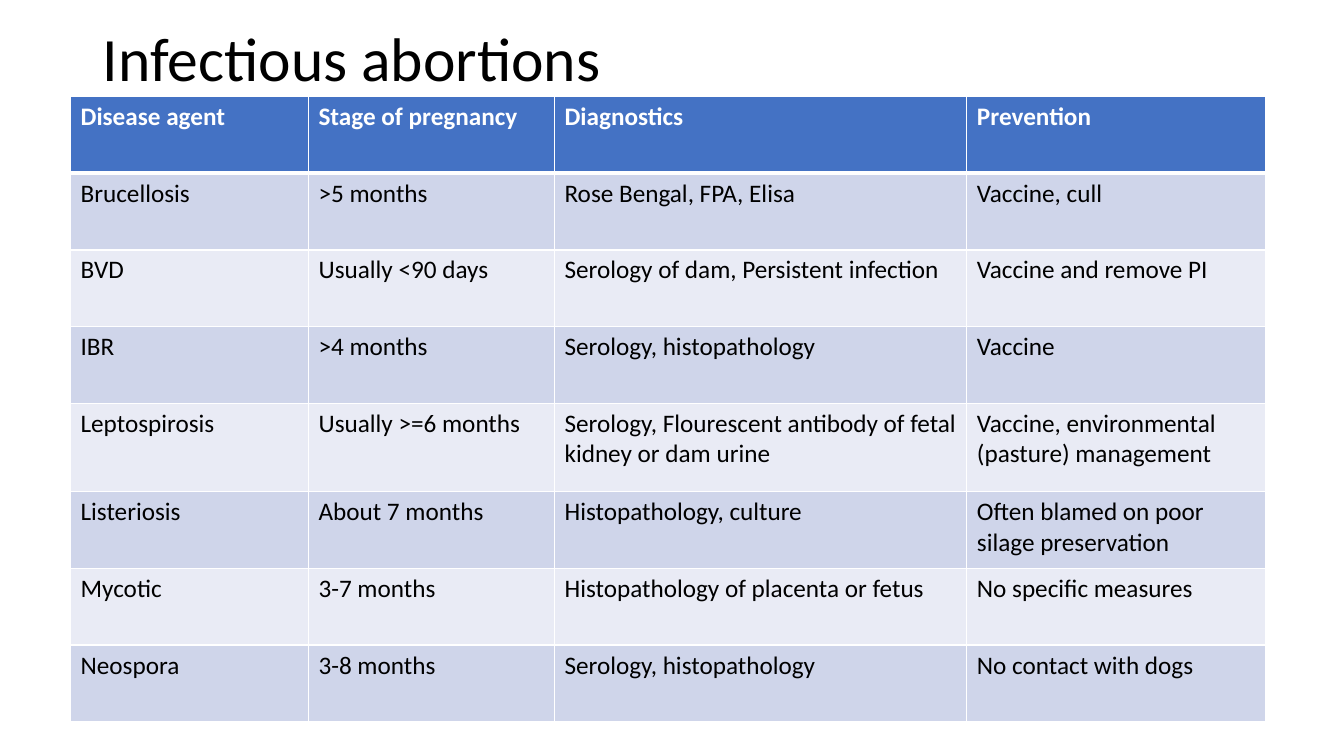
from dataclasses import dataclass

from lxml.etree import SubElement
from pptx import Presentation
from pptx.dml.color import RGBColor
from pptx.enum.text import MSO_ANCHOR, MSO_AUTO_SIZE, PP_ALIGN
from pptx.oxml.ns import qn
from pptx.util import Inches, Pt


@dataclass(frozen=True)
class Theme:
    font: str = "Calibri"
    ink: str = "000000"
    white: str = "FFFFFF"
    head: str = "4472C4"
    bands: tuple = ("CFD5EA", "E9EBF5")
    title: int = 44
    body: int = 18
    thin: int = 1
    thick: int = 3


THEME = Theme()

WIDTHS = (2.36, 2.44, 4.09, 2.96)
ROW, TALL = 0.76, 0.88
ROWS = (
    ("Disease agent", "Stage of pregnancy", "Diagnostics", "Prevention"),
    ("Brucellosis", ">5 months", "Rose Bengal, FPA, Elisa", "Vaccine, cull"),
    ("BVD", "Usually <90 days", "Serology of dam, Persistent infection",
     "Vaccine and remove PI"),
    ("IBR", ">4 months", "Serology, histopathology", "Vaccine"),
    ("Leptospirosis", "Usually >=6 months",
     "Serology, Flourescent antibody of fetal kidney or dam urine",
     "Vaccine, environmental (pasture) management"),
    ("Listeriosis", "About 7 months", "Histopathology, culture",
     "Often blamed on poor silage preservation"),
    ("Mycotic", "3-7 months", "Histopathology of placenta or fetus",
     "No specific measures"),
    ("Neospora", "3-8 months", "Serology, histopathology",
     "No contact with dogs"),
)
LONG = 4  # the leptospirosis row is taller


def add_run(para, text, size, color, bold=False):
    run = para.add_run()
    run.text = text
    font = run.font
    font.name, font.size, font.bold = THEME.font, Pt(size), bold
    font.color.rgb = RGBColor.from_string(color)


def add_title(slide, box, text):
    title = slide.shapes.title
    title.left, title.top, title.width, title.height = map(Inches, box)
    frame = title.text_frame
    frame.auto_size = MSO_AUTO_SIZE.NONE
    frame.vertical_anchor = MSO_ANCHOR.MIDDLE
    para = frame.paragraphs[0]
    para.alignment = PP_ALIGN.LEFT
    para.line_spacing = 0.9
    add_run(para, text, THEME.title, THEME.ink)


def set_lines(cell, top, bottom):
    # Cell borders come ahead of the fill in the cell properties
    props = cell._tc.get_or_add_tcPr()
    sides = {"lnL": THEME.thin, "lnR": THEME.thin, "lnT": top, "lnB": bottom}
    for spot, (side, width) in enumerate(sides.items()):
        line = SubElement(props, qn(f"a:{side}"), w=str(Pt(width)))
        fill = SubElement(line, qn("a:solidFill"))
        SubElement(fill, qn("a:srgbClr"), val=THEME.white)
        props.insert(spot, line)


def add_grid(slide, box, rows):
    frame = slide.shapes.add_table(len(rows), len(WIDTHS), *map(Inches, box))
    table = frame.table
    for col, width in zip(table.columns, WIDTHS):
        col.width = Inches(width)
    for i, row in enumerate(rows):
        table.rows[i].height = Inches(TALL if i == LONG else ROW)
        head = i == 0
        back = THEME.head if head else THEME.bands[(i - 1) % 2]
        ink = THEME.white if head else THEME.ink
        for j, text in enumerate(row):
            cell = table.cell(i, j)
            cell.fill.solid()
            cell.fill.fore_color.rgb = RGBColor.from_string(back)
            set_lines(cell, THEME.thick if i == 1 else THEME.thin,
                      THEME.thick if head else THEME.thin)
            add_run(cell.text_frame.paragraphs[0], text, THEME.body, ink, head)


def main():
    deck = Presentation()
    deck.slide_width, deck.slide_height = Inches(13.33), Inches(7.5)
    slide = deck.slides.add_slide(deck.slide_layouts[5])
    # Heading
    add_title(slide, (0.92, 0.1, 11.5, 1.02), "Infectious abortions")
    # Table of agents
    add_grid(slide, (0.7, 0.96, 11.85, 6.2), ROWS)
    deck.save("out.pptx")


if __name__ == "__main__":
    main()
